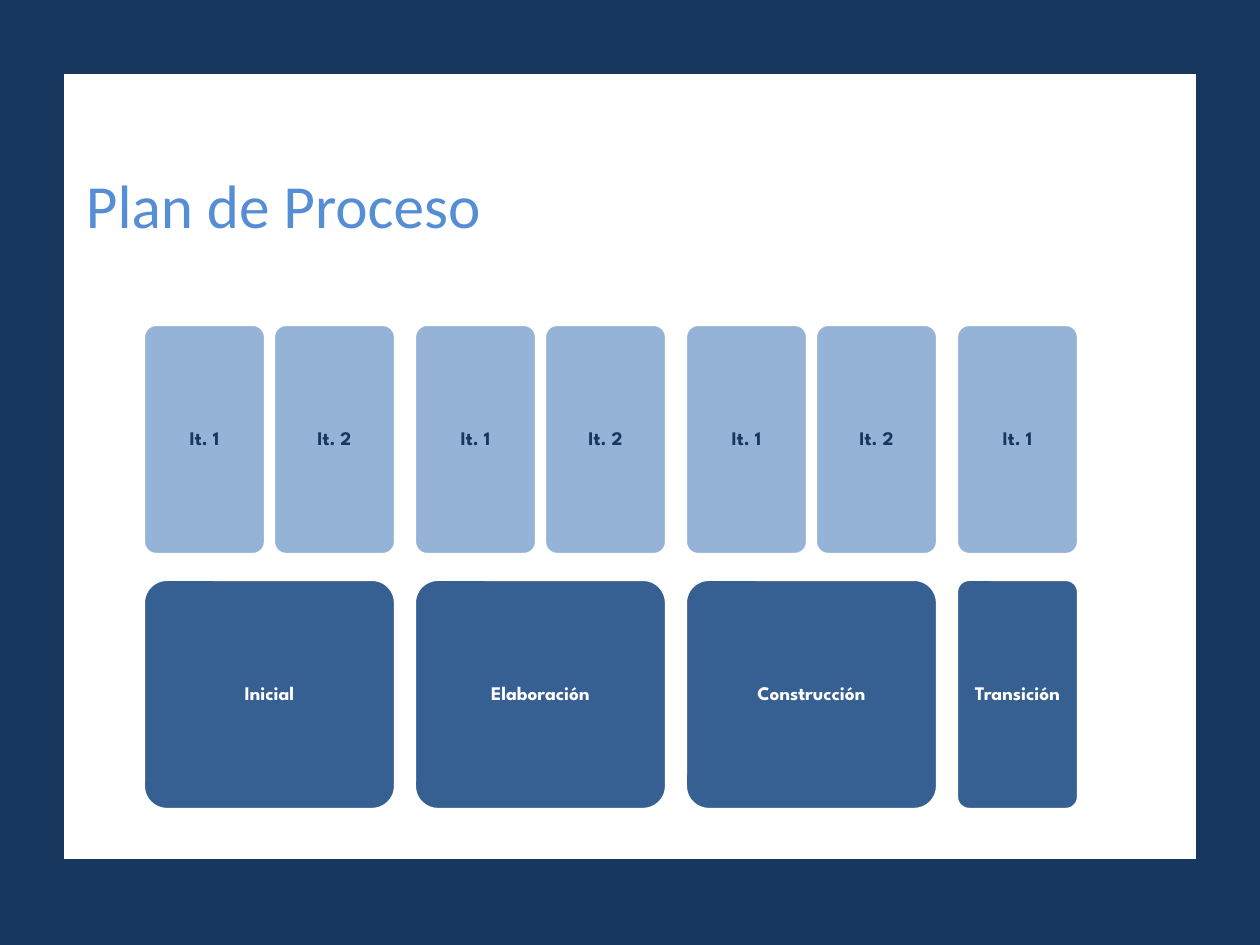
from dataclasses import dataclass

from pptx import Presentation
from pptx import util as u
from pptx.dml import color
from pptx.enum import shapes, text

PX_PER_INCH = 126


@dataclass(frozen=True)
class Theme:
    navy: str = "17375E"
    white: str = "FFFFFF"
    title_blue: str = "558ED5"
    phase_blue: str = "376092"
    iteration_blue: str = "95B3D7"
    title_font: str = "Calibri"
    card_font: str = "League Spartan"
    title_size: int = 35
    card_size: int = 11
    panel_line: float = 0.75
    card_line: float = 1.25


@dataclass(frozen=True)
class Box:
    left: int
    top: int
    width: int
    height: int


@dataclass(frozen=True)
class Phase:
    name: str
    iterations: int


THEME = Theme()
PANEL = Box(63, 73, 1134, 787)
PHASES = [
    Phase("Inicial", 2),
    Phase("Elaboración", 2),
    Phase("Construcción", 2),
    Phase("Transición", 1),
]

# Card grid, in px
GRID_LEFT = 144
ITERATION_TOP, PHASE_TOP = 325, 580
CARD_WIDTH, CARD_HEIGHT = 121, 229
ITERATION_PITCH, PHASE_GAP = 130, 20
CARD_INSET = 6


def px(length: int) -> u.Emu:
    return u.Emu(round(length * u.Inches(1) / PX_PER_INCH))


def rgb(value: str) -> color.RGBColor:
    return color.RGBColor.from_string(value)


def add_block(slide, kind, box: Box, *, fill: str, line: str, line_width: float):
    shape = slide.shapes.add_shape(
        kind, px(box.left), px(box.top), px(box.width), px(box.height))
    shape.shadow.inherit = False
    shape.fill.solid()
    shape.fill.fore_color.rgb = rgb(fill)
    shape.line.color.rgb = rgb(line)
    shape.line.width = u.Pt(line_width)
    return shape


def write_text(shape, content: str, *, font: str, size: int, ink: str,
               inset_left: int, inset_top: int, bold: bool = False,
               align=text.PP_ALIGN.LEFT, anchor=text.MSO_ANCHOR.TOP,
               line_spacing: float = 1.0) -> None:
    frame = shape.text_frame
    frame.word_wrap = True
    frame.vertical_anchor = anchor
    frame.margin_left = frame.margin_right = px(inset_left)
    frame.margin_top = frame.margin_bottom = px(inset_top)
    paragraph = frame.paragraphs[0]
    paragraph.alignment = align
    paragraph.line_spacing = line_spacing
    run = paragraph.add_run()
    run.text = content
    run.font.name = font
    run.font.size = u.Pt(size)
    run.font.bold = bold
    run.font.color.rgb = rgb(ink)


def add_card(slide, content: str, box: Box, *, fill: str, ink: str) -> None:
    card = add_block(slide, shapes.MSO_SHAPE.ROUNDED_RECTANGLE, box, fill=fill,
                     line=THEME.white, line_width=THEME.card_line)
    card.adjustments[0] = 0.1
    write_text(card, content, font=THEME.card_font, size=THEME.card_size,
               ink=ink, bold=True, inset_left=CARD_INSET, inset_top=CARD_INSET,
               align=text.PP_ALIGN.CENTER, anchor=text.MSO_ANCHOR.MIDDLE,
               line_spacing=0.9)


def add_phase(slide, phase: Phase, left: int) -> int:
    """Draw a phase below its iterations and return its width."""
    width = CARD_WIDTH + (phase.iterations - 1) * ITERATION_PITCH
    add_card(slide, phase.name, Box(left, PHASE_TOP, width, CARD_HEIGHT),
             fill=THEME.phase_blue, ink=THEME.white)
    for index in range(phase.iterations):
        box = Box(left + index * ITERATION_PITCH, ITERATION_TOP,
                  CARD_WIDTH, CARD_HEIGHT)
        add_card(slide, f"It. {index + 1}", box,
                 fill=THEME.iteration_blue, ink=THEME.navy)
    return width


def main() -> None:
    presentation = Presentation()
    presentation.slide_width = u.Inches(10)
    presentation.slide_height = u.Inches(7.5)
    slide = presentation.slides.add_slide(presentation.slide_layouts[6])
    slide.background.fill.solid()
    slide.background.fill.fore_color.rgb = rgb(THEME.navy)

    # White panel with the title
    panel = add_block(slide, shapes.MSO_SHAPE.RECTANGLE, PANEL, fill=THEME.white,
                      line=THEME.navy, line_width=THEME.panel_line)
    write_text(panel, "Plan de Proceso", font=THEME.title_font,
               size=THEME.title_size, ink=THEME.title_blue,
               inset_left=23, inset_top=94)

    # Phases from left to right
    left = GRID_LEFT
    for phase in PHASES:
        left += add_phase(slide, phase, left) + PHASE_GAP

    presentation.save("out.pptx")


if __name__ == "__main__":
    main()
